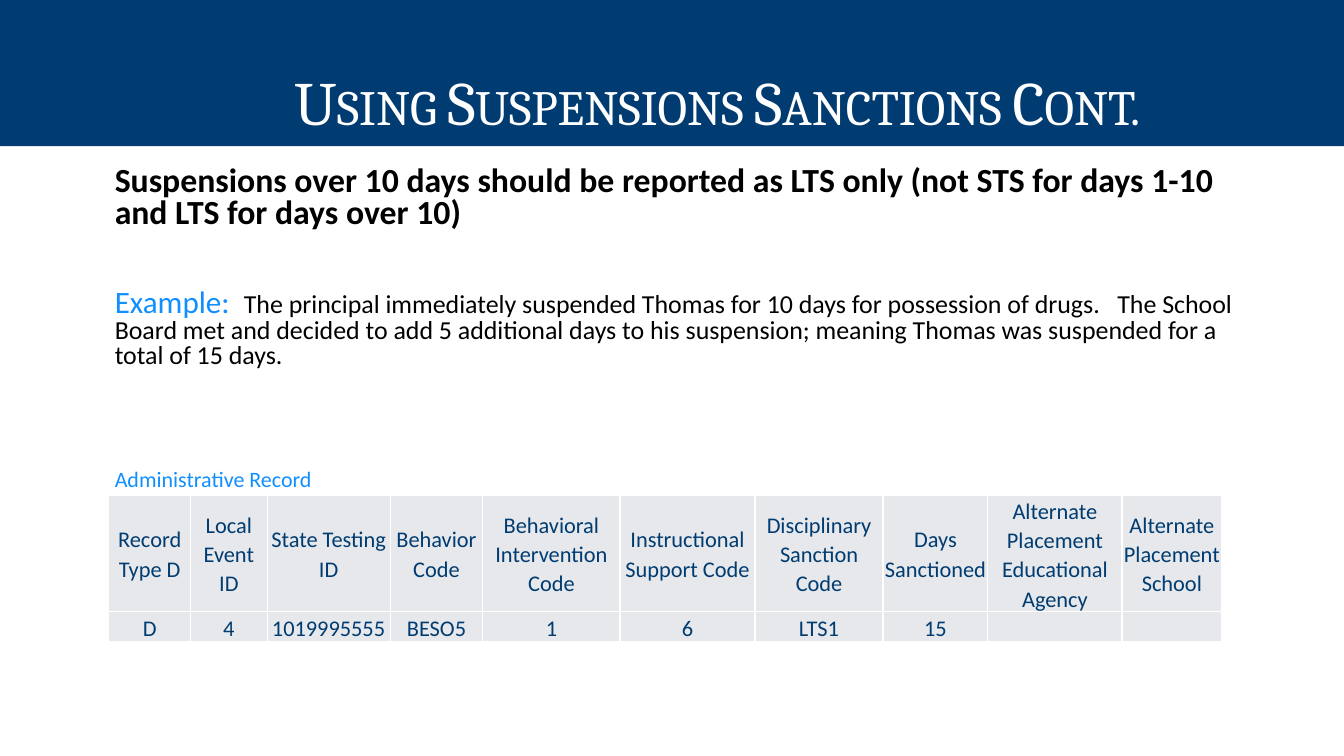
from dataclasses import dataclass

from lxml.etree import SubElement
from pptx import Presentation
from pptx.dml.color import RGBColor as Rgb
from pptx.enum.text import MSO_ANCHOR as Anchor, MSO_AUTO_SIZE as AutoSize, PP_ALIGN as Align
from pptx.oxml.ns import qn
from pptx.util import Inches, Pt


@dataclass(frozen=True)
class Theme:
    navy: str = "003C71"
    sky: str = "118FFF"
    black: str = "000000"
    white: str = "FFFFFF"
    cell: str = "E7E8EB"
    heading_font: str = "Cambria"
    body_font: str = "Calibri"
    title_size: float = 44
    lead_size: float = 24.1
    example_size: float = 22.2
    story_size: float = 18.5
    caption_size: float = 15.7
    table_size: float = 16


def format_span(span, size, color, name=Theme.body_font, bold=False):
    span.font.name, span.font.size, span.font.bold = name, Pt(size), bold
    span.font.color.rgb = Rgb.from_string(color)


def add_white_borders(cell):
    """Draw the four cell edges; they must come before the fill in the cell's XML."""
    properties = cell._tc.get_or_add_tcPr()
    for position, edge in enumerate(("lnL", "lnR", "lnT", "lnB")):
        line = SubElement(properties, qn(f"a:{edge}"), w=str(Pt(1)))
        fill = SubElement(line, qn("a:solidFill"))
        SubElement(fill, qn("a:srgbClr"), val=theme.white)
        properties.insert(position, line)


theme = Theme()
deck = Presentation()
deck.slide_width, deck.slide_height = Inches(13.33), Inches(7.5)
page = deck.slides.add_slide(deck.slide_layouts[5])

# Title band
title = page.shapes.title
title.left, title.top = 0, 0
title.width, title.height = deck.slide_width, Inches(1.45)
title.fill.solid()
title.fill.fore_color.rgb = Rgb.from_string(theme.navy)
frame = title.text_frame
frame.text = "Using Suspensions Sanctions Cont."
frame.auto_size, frame.word_wrap = AutoSize.NONE, True
frame.vertical_anchor = Anchor.MIDDLE
frame.margin_left, frame.margin_top = Inches(1), Inches(0.7)
frame.margin_right, frame.margin_bottom = Inches(0.1), Inches(0.05)
para = frame.paragraphs[0]
para.alignment, para.line_spacing = Align.CENTER, 0.9
format_span(para.runs[0], theme.title_size, theme.white, theme.heading_font)
para.runs[0].font._element.set("cap", "small")

# Rule, example and table caption: space before, then (text, size, colour, bold) spans
paragraphs = [
    (0, [("Suspensions over 10 days should be reported as LTS only "
          "(not STS for days 1-10 and LTS for days over 10)",
          theme.lead_size, theme.black, True)]),
    (42, [("Example:  ", theme.example_size, theme.sky, False),
          ("The principal immediately suspended Thomas for 10 days for possession of drugs.   "
           "The School Board met and decided to add 5 additional days to his suspension; "
           "meaning Thomas was suspended for a total of 15 days.",
           theme.story_size, theme.black, False)]),
    (72, [("Administrative Record", theme.caption_size, theme.sky, False)]),
]
box = page.shapes.add_textbox(Inches(1.04), Inches(1.6), Inches(11.54), Inches(3.3))
frame = box.text_frame
frame.word_wrap = True
for number, (space, spans) in enumerate(paragraphs):
    para = frame.add_paragraph() if number else frame.paragraphs[0]
    para.line_spacing, para.space_before = 0.8, Pt(space)
    for text, size, color, bold in spans:
        span = para.add_run()
        span.text = text
        format_span(span, size, color, bold=bold)

# Administrative record table: heading, value, column width
columns = [
    ("Record Type D", "D", 0.81),
    ("Local Event ID", "4", 0.76),
    ("State Testing ID", "1019995555", 1.22),
    ("Behavior Code", "BESO5", 0.92),
    ("Behavioral Intervention Code", "1", 1.36),
    ("Instructional Support Code", "6", 1.34),
    ("Disciplinary Sanction Code", "LTS1", 1.27),
    ("Days Sanctioned", "15", 1.04),
    ("Alternate Placement Educational Agency", "", 1.33),
    ("Alternate Placement School", "", 0.99),
]
row_heights = (1.16, 0.3)
record = page.shapes.add_table(
    len(row_heights), len(columns), Inches(1.08), Inches(4.91),
    Inches(sum(width for *_, width in columns)), Inches(sum(row_heights))).table
for row, height in zip(record.rows, row_heights):
    row.height = Inches(height)
for column, (*texts, width) in enumerate(columns):
    record.columns[column].width = Inches(width)
    for row, text in enumerate(texts):
        cell = record.cell(row, column)
        cell.fill.solid()
        cell.fill.fore_color.rgb = Rgb.from_string(theme.cell)
        cell.margin_left = cell.margin_right = cell.margin_top = Inches(0.01)
        cell.margin_bottom = 0
        cell.vertical_anchor = Anchor.MIDDLE
        add_white_borders(cell)
        para = cell.text_frame.paragraphs[0]
        para.text = text
        para.alignment, para.line_spacing = Align.CENTER, 1.07
        for span in para.runs:
            format_span(span, theme.table_size, theme.navy)
        if not text:
            para._p.get_or_add_endParaRPr().set("sz", str(theme.table_size * 100))

deck.save("out.pptx")
